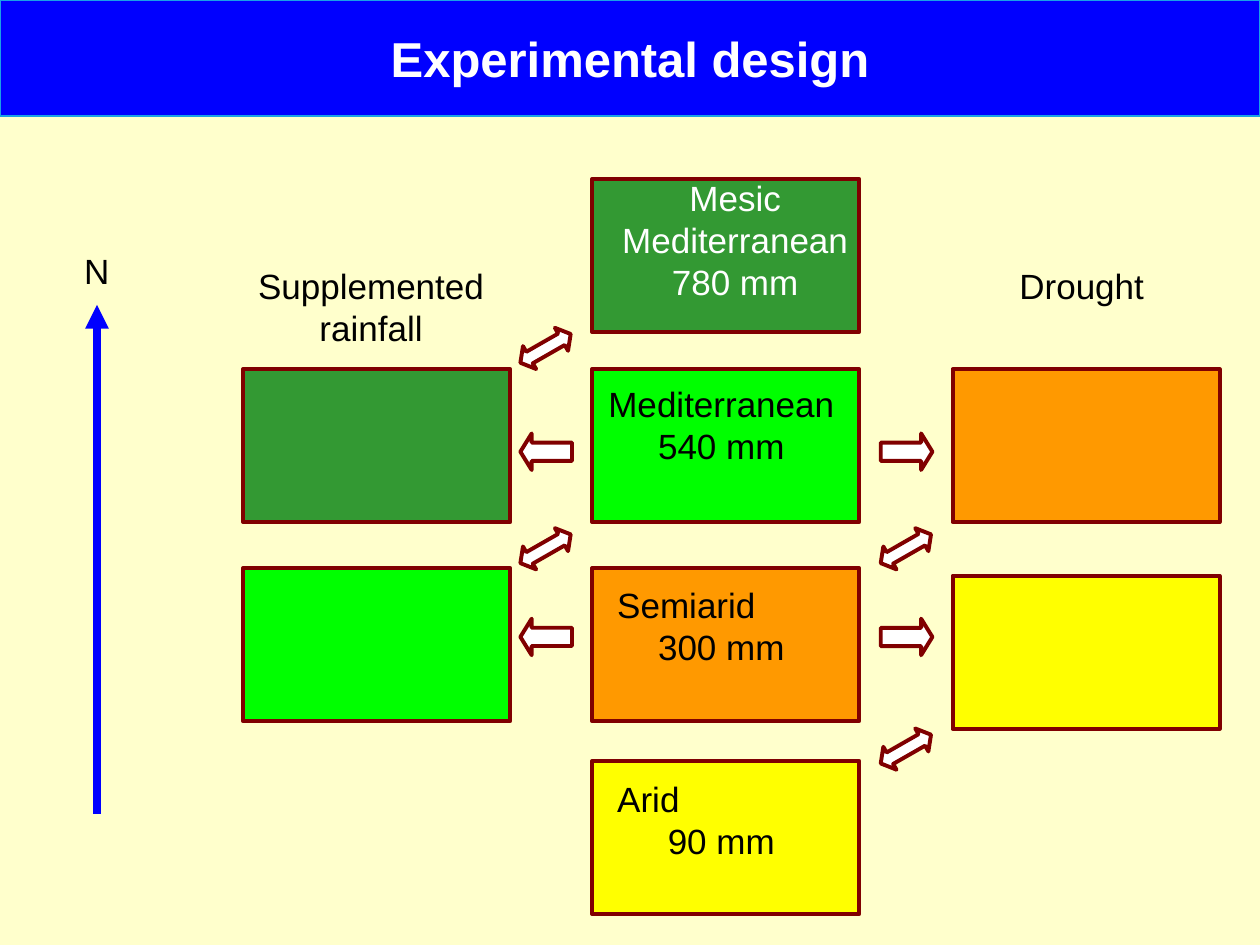
import pptx
import pptx.util
import pptx.dml.color
import pptx.enum.shapes
import pptx.enum.text
import pptx.oxml.ns
from lxml import etree

SHAPE = pptx.enum.shapes.MSO_SHAPE
ALIGN = pptx.enum.text.PP_ALIGN
CENTER, LEFT = ALIGN.CENTER, ALIGN.LEFT

BLACK, WHITE, BLUE = "000000", "FFFFFF", "0000FF"
MAROON, CREAM = "800000", "FFFFCC"
MESIC, MEDITERRANEAN, SEMIARID, ARID = "339933", "00FF00", "FF9900", "FFFF00"


def rgb(value):
    return pptx.dml.color.RGBColor.from_string(value)


def cells(count):
    return pptx.util.Inches(count / 10)


class Design:
    font = "Arial"
    size = 20
    outline = 2.25

    def __init__(self, prs):
        self.s = prs.slides.add_slide(prs.slide_layouts[5])
        self.s.background.fill.solid()
        self.s.background.fill.fore_color.rgb = rgb(CREAM)

    def paint(self, sp, fill, line, width):
        sp.fill.solid()
        sp.fill.fore_color.rgb = rgb(fill)
        sp.line.color.rgb = rgb(line)
        sp.line.width = pptx.util.Pt(width)

    def run(self, p, text, color, size=None, bold=False):
        r = p.add_run()
        r.text = text
        r.font.name = self.font
        r.font.size = pptx.util.Pt(size or self.size)
        r.font.bold = bold
        r.font.color.rgb = rgb(color)

    def title(self, text, width, height):
        sp = self.s.shapes.title
        sp.left, sp.top = cells(0), cells(0)
        sp.width, sp.height = cells(width), cells(height)
        self.paint(sp, BLUE, "1AA1E6", 0.75)
        tf = sp.text_frame
        tf.auto_size = pptx.enum.text.MSO_AUTO_SIZE.NONE
        tf.vertical_anchor = pptx.enum.text.MSO_ANCHOR.MIDDLE
        tf.margin_top = tf.margin_bottom = cells(2.2)
        p = tf.paragraphs[0]
        p.alignment = CENTER
        self.run(p, text, WHITE, 28, True)

    def shape(self, kind, fill, col, row, width, height, rotation=0, adjust=()):
        sp = self.s.shapes.add_shape(
            kind, cells(col), cells(row), cells(width), cells(height))
        sp.shadow.inherit = False
        sp.rotation = rotation
        for i, value in enumerate(adjust):
            sp.adjustments[i] = value
        self.paint(sp, fill, MAROON, self.outline)

    def box(self, fill, col, row):
        self.shape(SHAPE.RECTANGLE, fill, col, row, 21.2, 12.15)

    def treatment_arrow(self, col, row, rotation):
        self.shape(SHAPE.LEFT_ARROW, WHITE, col, row, 4.1, 2.9,
                   rotation, (0.5, 0.31))

    def match_arrow(self, col, row):
        self.shape(SHAPE.LEFT_RIGHT_ARROW, WHITE, col, row, 4.6, 2.1,
                   330.2, (0.5, 0.4))

    def text(self, lines, col, row, width, height, color=BLACK):
        sp = self.s.shapes.add_textbox(
            cells(col), cells(row), cells(width), cells(height))
        tf = sp.text_frame
        tf.word_wrap = True
        for i, (line, align, indent) in enumerate(lines):
            p = tf.add_paragraph() if i else tf.paragraphs[0]
            p.alignment = align
            if indent:
                p._p.get_or_add_pPr().set("marL", str(cells(indent)))
            self.run(p, line, color)

    def north_arrow(self, col, top, bottom):
        line = self.s.shapes.add_connector(
            pptx.enum.shapes.MSO_CONNECTOR.STRAIGHT,
            cells(col), cells(top), cells(col), cells(bottom))
        line.line.color.rgb = rgb(BLUE)
        line.line.width = pptx.util.Pt(4.5)
        qn = pptx.oxml.ns.qn
        etree.SubElement(line.line._get_or_add_ln(), qn("a:headEnd"), type="triangle")
        etree.SubElement(line._element.spPr, qn("a:effectLst"))


def main():
    prs = pptx.Presentation()
    prs.slide_width, prs.slide_height = cells(100), cells(75)
    d = Design(prs)
    d.title("Experimental design", 100, 9.2)

    supplemented, natural, drought = 19.3, 47, 75.6
    for fill, col, row in (
        (MESIC, natural, 14.2),
        (MEDITERRANEAN, natural, 29.3),
        (SEMIARID, natural, 45.1),
        (ARID, natural, 60.4),
        (MESIC, supplemented, 29.3),
        (MEDITERRANEAN, supplemented, 45.1),
        (SEMIARID, drought, 29.3),
        (ARID, drought, 45.7),
    ):
        d.box(fill, col, row)

    for row in (34.4, 49.1):
        d.treatment_arrow(41.3, row, 0)
        d.treatment_arrow(69.9, row, 180)
    for i in range(2):
        d.match_arrow(41, 26.6 + 15.9 * i)
        d.match_arrow(69.6, 42.5 + 15.9 * i)

    d.text([("Supplemented rainfall", CENTER, 0)], 18.4, 20.5, 22.1, 8.2)
    d.text([("Drought", CENTER, 0)], 74.8, 20.5, 22.1, 4.6)
    d.text([("Mesic Mediterranean 780 mm", CENTER, 0)], 46.2, 13.5, 24.3, 11, WHITE)
    d.text([("Mediterranean 540 mm", CENTER, 0)], 46.2, 29.9, 22.1, 7.7)
    for name, rain, row in (("Semiarid", "300 mm", 45.8), ("Arid", "90 mm", 61.2)):
        d.text([(name, LEFT, 1.8), (rain, CENTER, 0)], 46.2, row, 22.1, 7.7)

    d.text([("N", LEFT, 0)], 5.7, 19.3, 4.9, 4.6)
    d.north_arrow(7.7, 24.2, 64.6)
    prs.save("out.pptx")


if __name__ == "__main__":
    main()
